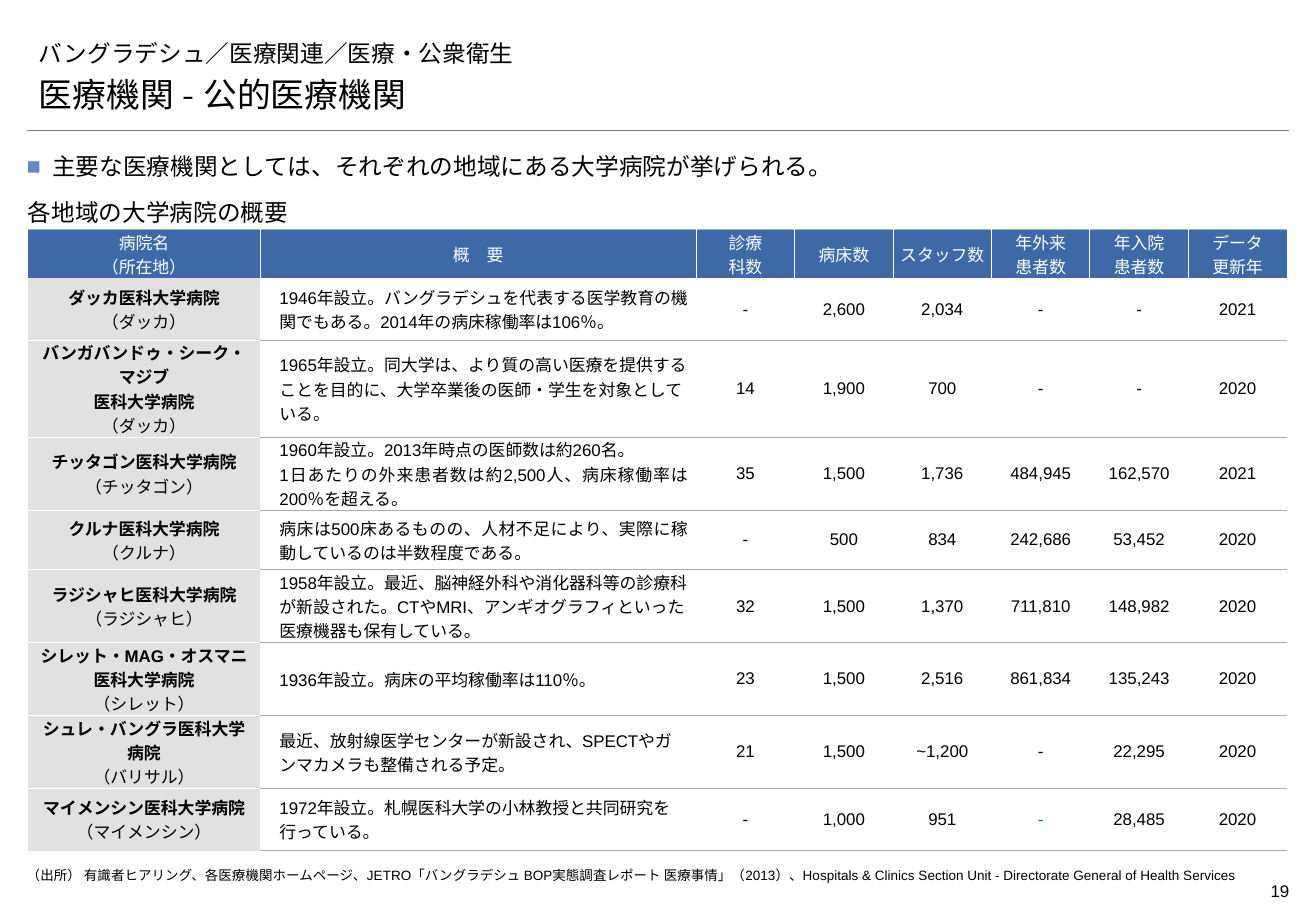
import pptx
import pptx.util
import pptx.dml.color
import pptx.enum.shapes
import pptx.enum.text
import pptx.oxml
import pptx.oxml.ns

Inches = pptx.util.Inches
Pt = pptx.util.Pt
ALIGN = pptx.enum.text.PP_ALIGN
ANCHOR = pptx.enum.text.MSO_ANCHOR

BLACK, WHITE, BLUE, GREY, RULE = "000000", "FFFFFF", "3D6AA7", "E1E1E1", "ACACAC"
PLAIN = "{2D5ABB26-0587-4C30-8999-92F81FD0307C}"
LEFT, WIDTH = 0.22, 10.39

COLS = [1.91, 3.59] + [0.81] * 6
ROWS = [0.4, 0.51, 0.51, 0.51, 0.49] + [0.51] * 4
HEADS = ["病院名\n（所在地）", "概　要", "診療\v科数", "病床数", "スタッフ数",
         "年外来\v患者数", "年入院\v患者数", "データ\v更新年"]
DATA = [
    ["ダッカ医科大学病院\n（ダッカ）",
     "1946年設立。バングラデシュを代表する医学教育の機関でもある。2014年の病床稼働率は106％。",
     "-", "2,600", "2,034", "-", "-", "2021"],
    ["バンガバンドゥ・シーク・マジブ\n医科大学病院\n（ダッカ）",
     "1965年設立。同大学は、より質の高い医療を提供することを目的に、大学卒業後の医師・学生を対象としている。",
     "14", "1,900", "700", "-", "-", "2020"],
    ["チッタゴン医科大学病院\n（チッタゴン）",
     "1960年設立。2013年時点の医師数は約260名。\n"
     "1日あたりの外来患者数は約2,500人、病床稼働率は200％を超える。",
     "35", "1,500", "1,736", "484,945", "162,570", "2021"],
    ["クルナ医科大学病院\n（クルナ）",
     "病床は500床あるものの、人材不足により、実際に稼動しているのは半数程度である。",
     "-", "500", "834", "242,686", "53,452", "2020"],
    ["ラジシャヒ医科大学病院\n（ラジシャヒ）",
     "1958年設立。最近、脳神経外科や消化器科等の診療科が新設された。CTやMRI、アンギオグラフィといった医療機器も保有している。",
     "32", "1,500", "1,370", "711,810", "148,982", "2020"],
    ["シレット・MAG・オスマニ医科大学病院\n（シレット）",
     "1936年設立。病床の平均稼働率は110％。",
     "23", "1,500", "2,516", "861,834", "135,243", "2020"],
    ["シュレ・バングラ医科大学病院\n（バリサル）",
     "最近、放射線医学センターが新設され、SPECTやガンマカメラも整備される予定。",
     "21", "1,500", "~1,200", "-", "22,295", "2020"],
    ["マイメンシン医科大学病院\n（マイメンシン）",
     "1972年設立。札幌医科大学の小林教授と共同研究を行っている。",
     "-", "1,000", "951", "-", "28,485", "2020"],
]
JUSTIFIED = (3, 4)
BLUE_DASH = (8, 5)


def color(text):
    return pptx.dml.color.RGBColor.from_string(text)


def style(par, size, face, ink=BLACK, align=ALIGN.LEFT, bold=False):
    par.alignment = align
    font = par.font
    font.size, font.name, font.bold = Pt(size), face, bold
    font.color.rgb = color(ink)


def write(shape, box, text, size, face, align=ALIGN.LEFT, anchor=ANCHOR.TOP,
          pads=(0, 0, 0, 0)):
    """Place a text shape in its box and fill its one paragraph."""
    shape.left, shape.top, shape.width, shape.height = map(Inches, box)
    frame = shape.text_frame
    frame.word_wrap = True
    frame.auto_size = pptx.enum.text.MSO_AUTO_SIZE.NONE
    frame.vertical_anchor = anchor
    (frame.margin_left, frame.margin_top,
     frame.margin_right, frame.margin_bottom) = map(Inches, pads)
    par = frame.paragraphs[0]
    par.text = text
    style(par, size, face, align=align)
    return par


def label(slide, box, *args, **opts):
    return write(slide.shapes.add_textbox(0, 0, 0, 0), box, *args, **opts)


def header(slide, left, top, width):
    opts = {"anchor": ANCHOR.BOTTOM, "pads": (0.1, 0.05, 0.1, 0.05)}
    write(slide.shapes.title, (left, top, width, 0.39),
          "バングラデシュ／医療関連／医療・公衆衛生", 14, "Montserrat", **opts)
    label(slide, (left, top + 0.39, width, 0.39),
          "医療機関 - 公的医療機関", 20, "Montserrat", **opts)
    y = Inches(top + 0.86)
    line = slide.shapes.add_connector(pptx.enum.shapes.MSO_CONNECTOR.STRAIGHT,
                                      Inches(left), y, Inches(left + width), y)
    line.line.color.rgb = color("7F7F7F")
    line.line.width = Pt(0.25)
    props = line._element.spPr
    props.append(pptx.oxml.parse_xml(
        f"<a:effectLst {pptx.oxml.ns.nsdecls('a')}/>"))


def bullet(slide, box):
    par = label(slide, box, "主要な医療機関としては、それぞれの地域にある大学病院が挙げられる。",
                14, "Arial", align=ALIGN.JUSTIFY)
    par.line_spacing, par.space_after = 1.1, Pt(2)
    props = par._p.get_or_add_pPr()
    props.set("marL", str(Inches(0.21)))
    props.set("indent", str(-Inches(0.21)))
    space = pptx.oxml.ns.nsdecls("a")
    font = props.find(pptx.oxml.ns.qn("a:defRPr"))
    for xml in (f'<a:buClr {space}><a:srgbClr val="5F8AC3"/></a:buClr>',
                f'<a:buFont {space} typeface="Arial"/>',
                f'<a:buChar {space} char="■"/>'):
        font.addprevious(pptx.oxml.parse_xml(xml))


def border(cell, side, ink):
    cell._tc.get_or_add_tcPr().append(pptx.oxml.parse_xml(
        f'<a:ln{side} {pptx.oxml.ns.nsdecls("a")} w="{Pt(0.5)}"><a:solidFill>'
        f'<a:srgbClr val="{ink}"/></a:solidFill></a:ln{side}>'))


def fill(cell, row, col, text):
    """Write one table cell, styled by its row and column."""
    head, name, story = row == 0, col == 0, col == 1
    last = row == len(DATA)
    if head:
        if col:
            border(cell, "L", WHITE)
        if col < len(COLS) - 1:
            border(cell, "R", WHITE)
        border(cell, "T", RULE)
    elif name:
        if row > 1:
            border(cell, "T", WHITE)
        border(cell, "B", GREY if last else WHITE)
    else:
        border(cell, "B", RULE)
    cell.fill.solid()
    cell.fill.fore_color.rgb = color(BLUE if head else GREY if name else WHITE)
    cell.vertical_anchor = ANCHOR.MIDDLE
    cell.margin_top = cell.margin_bottom = 0
    side = 0.07 if col < 2 else 0
    cell.margin_left = Inches(0.16 if story and not head else side)
    cell.margin_right = Inches(side)

    align = ALIGN.CENTER
    if story and not head:
        align = ALIGN.JUSTIFY if row in JUSTIFIED else ALIGN.LEFT
    ink = WHITE if head else "0070C0" if (row, col) == BLUE_DASH else BLACK
    face = "Noto Sans CJK JP" if head else "Arial"
    lines = text.split("\n")
    for i, line in enumerate(lines):
        frame = cell.text_frame
        par = frame.add_paragraph() if i else frame.paragraphs[0]
        par.text = line
        bold = name and not head and i < len(lines) - 1
        style(par, 10, face, ink, align, bold)


def table(slide, left, top):
    label(slide, (left, top - 0.34, 8.03, 0.39), "各地域の大学病院の概要",
          14, "Montserrat", anchor=ANCHOR.BOTTOM, pads=(0, 0.05, 0, 0.08))
    frame = slide.shapes.add_table(len(ROWS), len(COLS), Inches(left), Inches(top),
                                   Inches(sum(COLS)), Inches(sum(ROWS)))
    grid = frame.table
    grid.horz_banding = False
    grid._tbl.tblPr.find(pptx.oxml.ns.qn("a:tableStyleId")).text = PLAIN
    for col, width in zip(grid.columns, COLS):
        col.width = Inches(width)
    for row, height in zip(grid.rows, ROWS):
        row.height = Inches(height)
    for r, texts in enumerate([HEADS] + DATA):
        for c, text in enumerate(texts):
            fill(grid.cell(r, c), r, c, text)


def footer(slide, left, top, width):
    label(slide, (left, top, width, 0.16),
          "（出所） 有識者ヒアリング、各医療機関ホームページ、JETRO「バングラデシュ BOP実態調査レポート 医療事情」"
          "（2013）、Hospitals & Clinics Section Unit - Directorate General of Health Services",
          8, "Arial")
    label(slide, (left + width - 0.78, top + 0.06, 0.78, 0.27), "19", 10, "Arial",
          align=ALIGN.RIGHT, pads=(0, 0.05, 0, 0.05))


def main():
    deck = pptx.Presentation()
    deck.slide_width, deck.slide_height = Inches(10.83), Inches(7.5)
    slide = deck.slides.add_slide(deck.slide_layouts[5])
    header(slide, LEFT, 0.21, WIDTH)
    bullet(slide, (LEFT, 1.23, WIDTH, 0.26))
    table(slide, 0.23, 1.89)
    footer(slide, LEFT, 7.14, WIDTH)
    deck.save("out.pptx")


if __name__ == "__main__":
    main()
